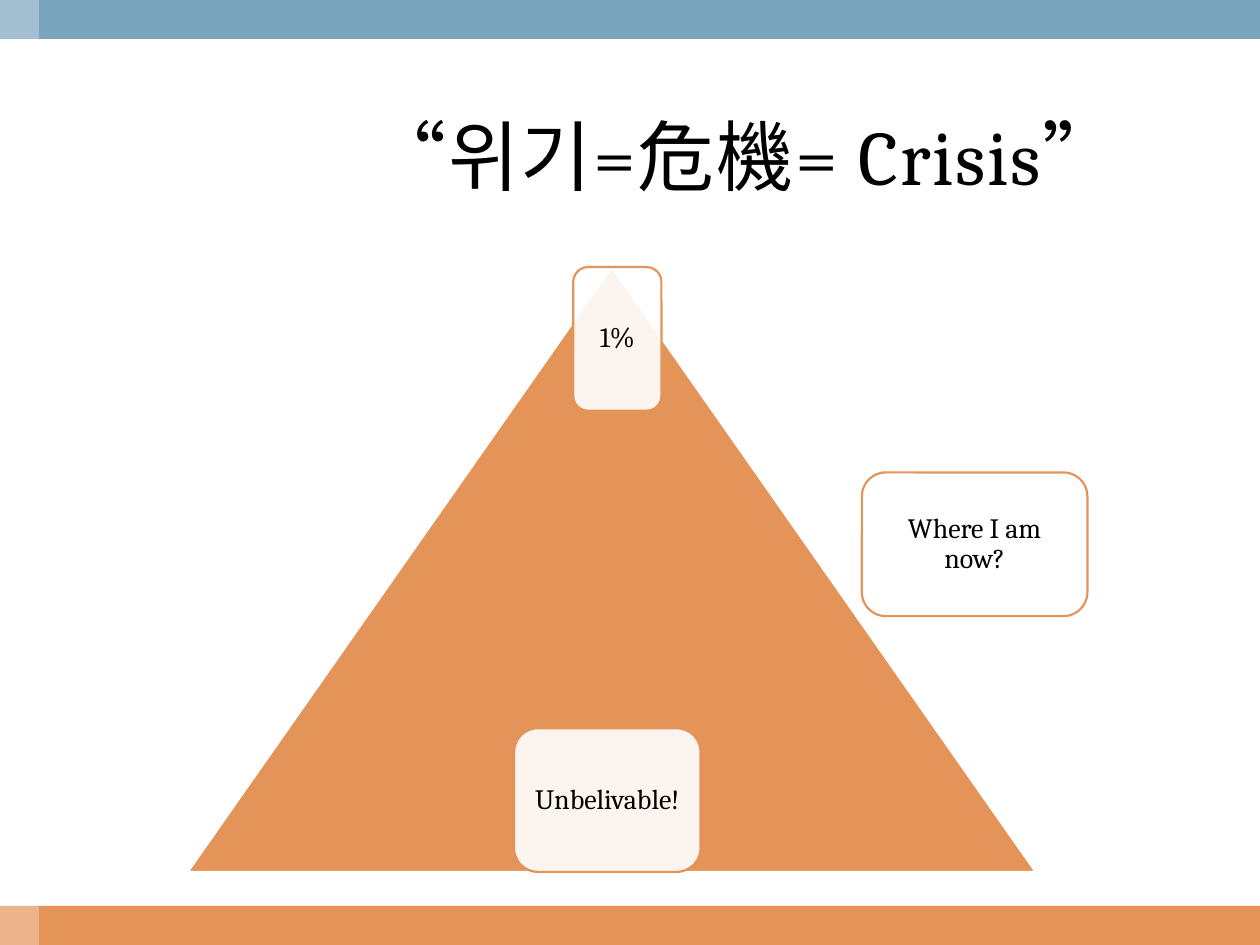
"""Build the crisis pyramid slide."""
from lxml.etree import SubElement
from pptx import Presentation
from pptx.dml.color import RGBColor
from pptx.enum.shapes import MSO_SHAPE as Shape
from pptx.enum.text import MSO_ANCHOR as Anchor, PP_ALIGN as Align
from pptx.oxml.ns import qn
from pptx.util import Inches, Pt

COLORS = {"orange": "E49458", "blue": "7BA5BE", "white": "FFFFFF", "black": "000000"}
FONT = "Cambria"
LABELS = [
    ("1%", 4.55, 2.12, 0.7),
    ("Where I am now?", 6.84, 3.75, 1.79),
    ("Unbelivable!", 4.08, 5.78, 1.48),
]
LABEL_HEIGHT = 1.14
BAR_HEIGHT = 0.31


def color(name):
    return RGBColor.from_string(COLORS[name])


def add_block(page, kind, place, fill, line=None, opacity=100):
    box = page.shapes.add_shape(kind, *map(Inches, place))
    box.shadow.inherit = False
    box.fill.solid()
    box.fill.fore_color.rgb = color(fill)
    if opacity < 100:
        tint = box.fill._xPr.find(qn("a:solidFill"))[0]
        SubElement(tint, qn("a:alpha"), val=str(opacity * 1000))
    if line:
        box.line.color.rgb = color(line)
        box.line.width = Pt(1.25)
    else:
        box.line.fill.background()
    return box


def write_text(box, text, size, inset, left=None, line_spacing=None, tracking=None):
    frame = box.text_frame
    frame.word_wrap = True
    frame.vertical_anchor = Anchor.MIDDLE
    frame.margin_right = frame.margin_top = frame.margin_bottom = Inches(inset)
    frame.margin_left = Inches(inset if left is None else left)
    para = frame.paragraphs[0]
    para.alignment = Align.CENTER
    para.line_spacing = line_spacing
    span = para.add_run()
    span.text = text
    span.font.name = FONT
    span.font.size = Pt(size)
    span.font.color.rgb = color("black")
    if tracking:
        span.font._element.set("spc", str(tracking * 100))


def add_frame(page, width, height):
    add_block(page, Shape.RECTANGLE, (0, height - BAR_HEIGHT, width, BAR_HEIGHT), "orange")
    add_block(page, Shape.RECTANGLE, (0, 0, width, BAR_HEIGHT), "blue")
    add_block(page, Shape.RECTANGLE, (0, 0, BAR_HEIGHT, height), "white", opacity=30)


def add_title(page, text):
    title = page.shapes.title
    title.left, title.top, title.width, title.height = map(Inches, (0.5, 0.6, 9, 1.25))
    write_text(title, text, size=44, inset=0.1, left=1.92, tracking=1)


def add_pyramid(page):
    add_block(page, Shape.ISOSCELES_TRIANGLE, (1.49, 2.12, 6.73, 4.8), "orange", line="white")
    for text, left, top, width in LABELS:
        place = (left, top, width, LABEL_HEIGHT)
        box = add_block(page, Shape.ROUNDED_RECTANGLE, place, "white", line="orange", opacity=90)
        write_text(box, text, size=16, inset=0.07, line_spacing=0.9)


def main():
    deck = Presentation()
    deck.slide_width, deck.slide_height = Inches(10), Inches(7.5)
    page = deck.slides.add_slide(deck.slide_layouts[5])
    add_frame(page, 10, 7.5)
    add_title(page, "“위기=危機= Crisis”")
    add_pyramid(page)
    deck.save("out.pptx")


if __name__ == "__main__":
    main()
